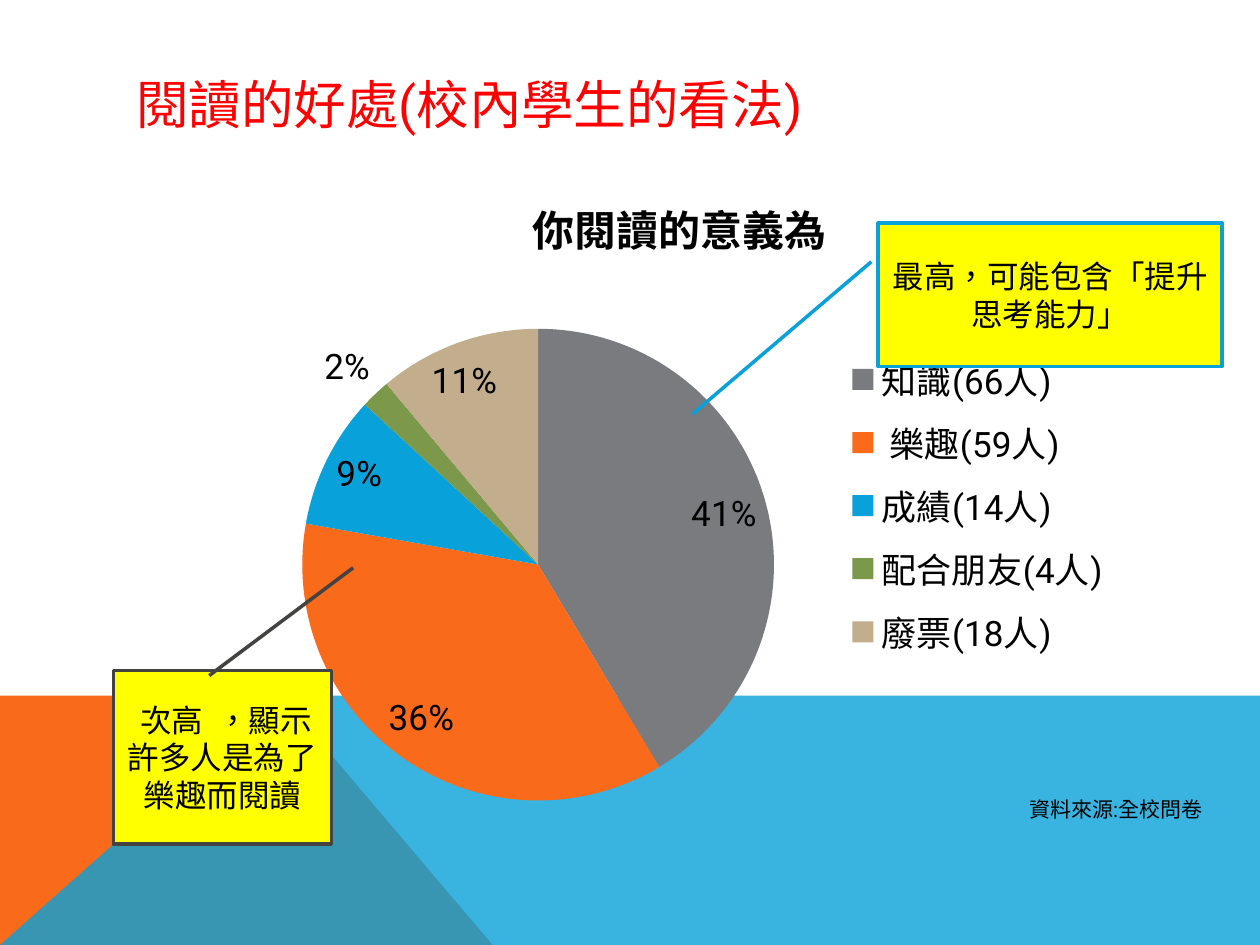
"""Build the slide on the benefits of reading, with a pie chart and two callouts."""
from lxml import etree
from pptx import Presentation
from pptx.chart.data import CategoryChartData
from pptx.dml.color import RGBColor
from pptx.enum.chart import XL_CHART_TYPE, XL_LABEL_POSITION, XL_LEGEND_POSITION
from pptx.enum.lang import MSO_LANGUAGE_ID
from pptx.enum.shapes import MSO_SHAPE
from pptx.enum.text import MSO_ANCHOR, PP_ALIGN
from pptx.oxml.ns import qn
from pptx.util import Inches, Pt

PIE = XL_CHART_TYPE.PIE
FIT = XL_LABEL_POSITION.BEST_FIT
RIGHT = XL_LEGEND_POSITION.RIGHT
CALLOUT = MSO_SHAPE.LINE_CALLOUT_1
TOP, MIDDLE = MSO_ANCHOR.TOP, MSO_ANCHOR.MIDDLE
LEFT, CENTER = PP_ALIGN.LEFT, PP_ALIGN.CENTER
TAIWAN = MSO_LANGUAGE_ID.TAIWAN if hasattr(MSO_LANGUAGE_ID, "TAIWAN") else None
FONT = "Roboto"


def color(code):
    return RGBColor.from_string(code)


def write(shape, text, size, code, align, anchor):
    frame = shape.text_frame
    frame.word_wrap = True
    frame.vertical_anchor = anchor
    para = frame.paragraphs[0]
    para.alignment = align
    run = para.add_run()
    run.text = text
    font = run.font
    font.name, font.size = FONT, Pt(size)
    font.color.rgb = color(code)
    run._r.get_or_add_rPr().set("lang", "zh-TW")


prs = Presentation()
prs.slide_width, prs.slide_height = Inches(10), Inches(7.5)
slide = prs.slides.add_slide(prs.slide_layouts[5])
shapes = slide.shapes

bands = [
    ("F96A1B", 100, [(0, 7.5), (0, 5.52), (2.23, 5.52), (3.91, 7.5)]),
    ("08A1D9", 80, [(0, 7.5), (2.23, 5.52), (10, 5.52), (10, 7.5)]),
]
for code, alpha, points in bands:
    spots = [(Inches(x), Inches(y)) for x, y in points]
    pen = shapes.build_freeform(*spots[0])
    pen.add_line_segments(spots[1:], close=True)
    band = pen.convert_to_shape()
    band.shadow.inherit = False
    band.fill.solid()
    band.fill.fore_color.rgb = color(code)
    band.line.fill.background()
    if alpha < 100:
        tint = band._element.spPr.find(qn("a:solidFill"))[0]
        etree.SubElement(tint, qn("a:alpha")).set("val", str(alpha * 1000))

title = shapes.title
title.left, title.top = Inches(0.98), Inches(0.52)
title.width, title.height = Inches(5.5), Inches(0.61)
write(title, "閱讀的好處(校內學生的看法)", 30, "FF0000", LEFT, TOP)
shapes._spTree.append(title._element)

slices = [
    ("知識(66人)  ", 41, "797B7E"),
    (" 樂趣(59人)", 36, "F96A1B"),
    ("成績(14人)", 9, "08A1D9"),
    ("配合朋友(4人)  ", 2, "7C984A"),
    ("廢票(18人)", 11, "C2AD8D"),
]
data = CategoryChartData()
data.categories = [name for name, share, code in slices]
data.add_series("Series 1", [share for name, share, code in slices])
chart = shapes.add_chart(
    PIE, Inches(1.65), Inches(1.31), Inches(7.49), Inches(5.2), data
).chart
chart.font.name, chart.font.size = FONT, Pt(20)
chart.font.color.rgb = color("000000")

chart.has_title = True
head = chart.chart_title.text_frame.paragraphs[0].add_run()
head.text = "你閱讀的意義為"
head.font.name, head.font.size, head.font.bold = FONT, Pt(24), True
head.font.color.rgb = color("000000")

chart.has_legend = True
chart.legend.position = RIGHT
chart.legend.include_in_layout = False

plot = chart.plots[0]
plot.vary_by_categories = True
plot.has_data_labels = True
labels = plot.data_labels
labels.show_percentage, labels.show_value = True, False
labels.number_format, labels.number_format_is_linked = "0%", False
labels.position = FIT
for i, (name, share, code) in enumerate(slices):
    fill = plot.series[0].points[i].format.fill
    fill.solid()
    fill.fore_color.rgb = color(code)

space = chart._chartSpace.chart
areas = [
    (space.plotArea, 0, {"layoutTarget": "inner"}, (0.1, 0.25, 0.5, 0.72)),
    (chart.legend._element, 1, {}, (0.66, 0.27, 0.33, 0.5)),
]
for area, index, modes, box in areas:
    for old in area.findall(qn("c:layout")):
        area.remove(old)
    layout = etree.Element(qn("c:layout"))
    manual = etree.SubElement(layout, qn("c:manualLayout"))
    rules = modes | {"xMode": "edge", "yMode": "edge"} | dict(zip("xywh", box))
    for key, value in rules.items():
        etree.SubElement(manual, qn("c:" + key)).set("val", str(value))
    area.insert(index, layout)

notes = [
    ("最高，可能包含「提升思考能力」", (6.97, 1.77, 2.73, 1.14),
     (0.27, -0.02, 1.33, -0.54), "08A1D9"),
    (" 次高  ，顯示許多人是為了樂趣而閱讀", (0.9, 5.32, 1.73, 1.38),
     (0.03, 0.44, -0.59, 1.1), "434342"),
]
for text, box, bends, code in notes:
    note = shapes.add_shape(CALLOUT, *map(Inches, box))
    note.shadow.inherit = False
    for i, bend in enumerate(bends):
        note.adjustments[i] = bend
    note.fill.solid()
    note.fill.fore_color.rgb = color("FFFF00")
    note.line.color.rgb = color(code)
    note.line.width = Pt(2)
    write(note, text, 18, "000000", CENTER, MIDDLE)

source = shapes.add_textbox(Inches(8.07), Inches(6.27), Inches(1.59), Inches(0.3))
write(source, "資料來源:全校問卷", 12, "000000", LEFT, TOP)

prs.save("out.pptx")
